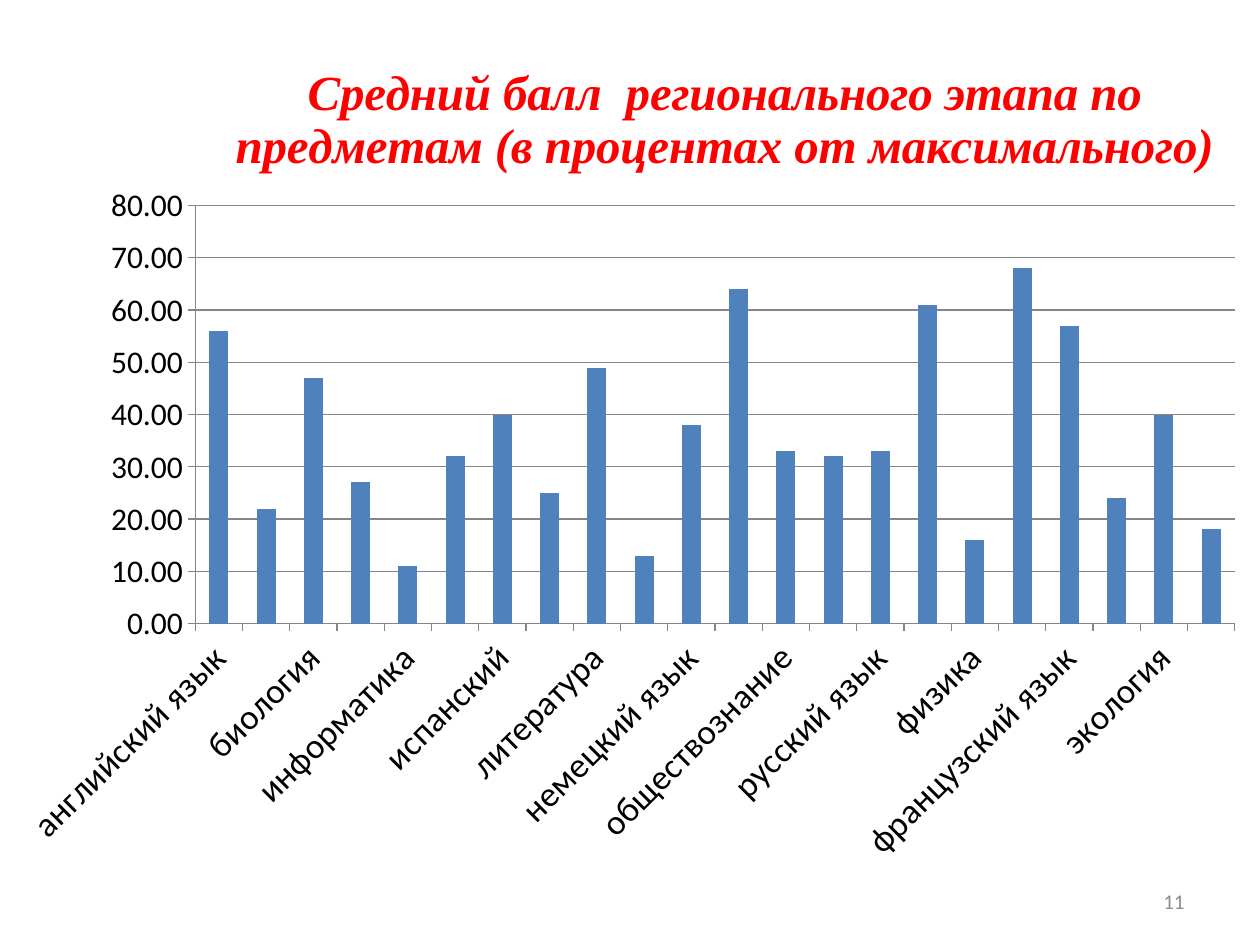
import pptx
import pptx.chart.data
import pptx.dml.color
import pptx.enum.chart
import pptx.enum.text
import pptx.oxml
import pptx.oxml.ns
import pptx.util

# Content
TITLE = "Средний балл  регионального этапа по предметам (в процентах от максимального)"
PAGE = "11"
SCORES = [
    ("английский язык", 56), ("астрономия", 22), ("биология", 47),
    ("география", 27), ("информатика", 11), ("искусство", 32),
    ("испанский", 40), ("история", 25), ("литература", 49),
    ("математика", 13), ("немецкий язык", 38), ("ОБЖ", 64),
    ("обществознание", 33), ("право", 32), ("русский язык", 33),
    ("технология", 61), ("физика", 16), ("физическая культура", 68),
    ("французский язык", 57), ("химия", 24), ("экология", 40),
    ("экономика", 18),
]
COLORS = {"title": "FF0000", "bar": "4F81BD", "text": "000000",
          "line": "868686", "page": "8C8C8C"}
W, H = 10, 7.5

# Shares of the slide (frames) and of the chart (layouts): x, y, w, h
CHART_BOX = (0, 0.028, 1, 0.903)
PAGE_BOX = (0.717, 0.927, 0.233, 0.053)
PLOT = {"x": 0.155, "y": 0.21, "w": 0.825, "h": 0.49}
TITLE_POS = {"x": 0.18, "y": 0.03}


def frame(box):
    return [pptx.util.Inches(v * side) for v, side in zip(box, (W, H, W, H))]


def style(font, size, color, name="Calibri"):
    font.size = pptx.util.Pt(size)
    font.name = name
    font.color.rgb = pptx.dml.color.RGBColor.from_string(COLORS[color])


def line(fmt):
    fmt.line.color.rgb = pptx.dml.color.RGBColor.from_string(COLORS["line"])
    fmt.line.width = pptx.util.Pt(0.75)


def place(parent, position, index, inner=False):
    """Put a manual layout into a chart element."""
    for old in parent.findall(pptx.oxml.ns.qn("c:layout")):
        parent.remove(old)
    target = '<c:layoutTarget val="inner"/>' if inner else ""
    modes = "".join(f'<c:{k}Mode val="edge"/>' for k in "xy")
    values = "".join(f'<c:{k} val="{v}"/>' for k, v in position.items())
    parent.insert(index, pptx.oxml.parse_xml(
        f'<c:layout {pptx.oxml.ns.nsdecls("c")}><c:manualLayout>'
        f'{target}{modes}{values}</c:manualLayout></c:layout>'))


prs = pptx.Presentation()
prs.slide_width, prs.slide_height = pptx.util.Inches(W), pptx.util.Inches(H)
s = prs.slides.add_slide(prs.slide_layouts[6])

# Page number
tf = s.shapes.add_textbox(*frame(PAGE_BOX)).text_frame
tf.word_wrap = True
tf.vertical_anchor = pptx.enum.text.MSO_ANCHOR.MIDDLE
p = tf.paragraphs[0]
p.alignment = pptx.enum.text.PP_ALIGN.RIGHT
r = p.add_run()
r.text = PAGE
style(r.font, 12, "page")

# Chart
data = pptx.chart.data.CategoryChartData(number_format="0.00")
data.categories = [subject for subject, _ in SCORES]
data.add_series("Series 1", [score for _, score in SCORES])
chart = s.shapes.add_chart(
    pptx.enum.chart.XL_CHART_TYPE.COLUMN_CLUSTERED, *frame(CHART_BOX), data).chart
style(chart.font, 14, "text")
chart.has_legend = False
plot = chart.plots[0]
plot.gap_width = 150
plot.vary_by_categories = False
fill = plot.series[0].format.fill
fill.solid()
fill.fore_color.rgb = pptx.dml.color.RGBColor.from_string(COLORS["bar"])
place(chart.element.chart.plotArea, PLOT, 0, inner=True)

# Chart title
chart.has_title = True
r = chart.chart_title.text_frame.paragraphs[0].add_run()
r.text = TITLE
style(r.font, 28, "title", "Times New Roman")
r.font.bold = r.font.italic = True
place(chart.element.chart.find(pptx.oxml.ns.qn("c:title")), TITLE_POS, 1)

# Axes
for axis, size in ((chart.category_axis, 20), (chart.value_axis, 18)):
    style(axis.tick_labels.font, size, "text")
    axis.major_tick_mark = pptx.enum.chart.XL_TICK_MARK.OUTSIDE
    axis.minor_tick_mark = pptx.enum.chart.XL_TICK_MARK.NONE
    line(axis.format)
value_axis = chart.value_axis
value_axis.minimum_scale, value_axis.maximum_scale = 0, 80
value_axis.major_unit = 10
value_axis.has_major_gridlines = True
line(value_axis.major_gridlines.format)
value_axis.tick_labels.number_format = "0.00"
value_axis.tick_labels.number_format_is_linked = False
labels = chart.category_axis._element.find(pptx.oxml.ns.qn("c:txPr"))
labels.find(pptx.oxml.ns.qn("a:bodyPr")).set("rot", str(-45 * 60000))

prs.save("out.pptx")
